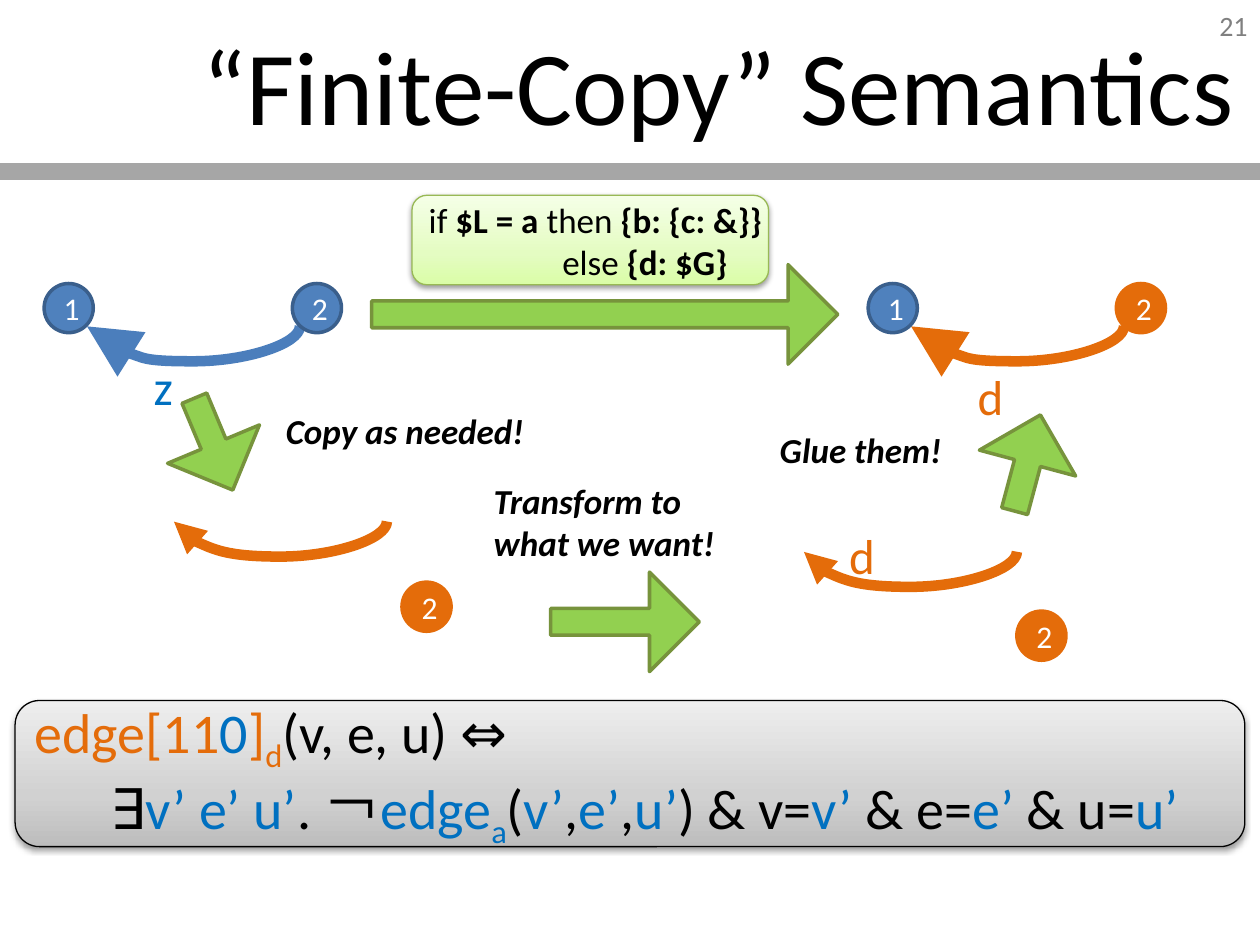
from copy import deepcopy
from lxml.etree import SubElement
from pptx import Presentation
from pptx.dml.color import RGBColor
from pptx.enum.shapes import MSO_CONNECTOR, MSO_SHAPE
from pptx.enum.text import MSO_ANCHOR, PP_ALIGN
from pptx.oxml.ns import qn
from pptx.util import Emu, Inches, Pt

BLACK, WHITE, GRAY = "000000", "FFFFFF", "808080"
ORANGE, BLUE, NODE, RIM = "E46C0A", "0070C0", "4F81BD", "3A5F8C"
ARC, GREEN, EDGE = "4B7EBC", "92D050", "77933C"
DOT = 0.39    # node diameter
SPAN = 1.69   # width of an arc
WIDE, HIGH = 10, 7.5


def color(code):
    return RGBColor.from_string(code)


def style(run, size, code=BLACK, bold=False, ital=False):
    font = run.font
    font.name, font.size = "Calibri", Pt(size)
    font.bold, font.italic = bold, ital
    font.color.rgb = color(code)


def text(slide, box, words, size, code=BLACK, align=PP_ALIGN.LEFT,
         anchor=MSO_ANCHOR.TOP, wrap=True, strong=False):
    frame = slide.shapes.add_textbox(*map(Inches, box)).text_frame
    frame.word_wrap, frame.vertical_anchor = wrap, anchor
    frame.text = words
    for para in frame.paragraphs:
        para.alignment = align
        for run in para.runs:
            style(run, size, code, strong, strong)


def block(slide, kind, box, fill, line, width=2):
    shape = slide.shapes.add_shape(kind, *map(Inches, box))
    shape.shadow.inherit = False
    if fill:
        shape.fill.solid()
        shape.fill.fore_color.rgb = color(fill)
    shape.line.color.rgb = color(line)
    shape.line.width = Pt(width)
    return shape


def link(slide, kind, ends, code, width):
    line = slide.shapes.add_connector(kind, *ends)
    line.line.color.rgb = color(code)
    line.line.width = Pt(width)
    SubElement(line._element.spPr, qn("a:effectLst"))
    return line


def arc(slide, x, y, code, head):
    """Sagging arrow from (x + SPAN, y) back to (x, y)."""
    mid, top = Inches(x + SPAN / 2), Inches(y - SPAN / 2)
    thin = Emu(1588)  # the sag is a multiple of this width
    line = link(slide, MSO_CONNECTOR.CURVE,
                (mid, top, mid + thin, top + Inches(SPAN)), code, 6)
    props = line._element.spPr
    props.find(qn("a:xfrm")).set("rot", "5400000")
    guides = props.find(qn("a:prstGeom")).get_or_add_avLst()
    SubElement(guides, qn("a:gd"), name="adj1", fmla="val 17715800")
    SubElement(props.find(qn("a:ln")), qn("a:tailEnd"),
               type="triangle", w=head, len=head)


def node(slide, x, y, digit, fill, line):
    shape = block(slide, MSO_SHAPE.OVAL, (x, y, DOT, DOT), fill, line)
    frame = shape.text_frame
    frame.text = digit
    frame.vertical_anchor = MSO_ANCHOR.MIDDLE
    frame.paragraphs[0].alignment = PP_ALIGN.CENTER
    style(frame.paragraphs[0].runs[0], 18, WHITE)


def graph(slide, x, y, code, nodes, label=None, head="med"):
    """Arc with its label and nodes, all offset from (x, y)."""
    arc(slide, x + 0.34, y + 0.34, code, head)
    if label:
        word, dx, dy, ink = label
        text(slide, (x + dx, y + dy, 0.41, 0.57), word, 28, ink, wrap=False)
    for dx, dy, digit, fill, line in nodes:
        node(slide, x + dx, y + dy, digit, fill, line)


def step(slide, box, turn=0, note=None, area=None):
    """Green block arrow with an optional note."""
    shape = block(slide, MSO_SHAPE.RIGHT_ARROW, box, GREEN, EDGE)
    shape.adjustments[0], shape.adjustments[1] = 0.269, 0.5
    shape.rotation = turn
    if note:
        text(slide, area, note, 20, strong=True)


def panel(slide, box, shades, line, size, rows, indent, wrap):
    """Shaded rounded box; rows hold (words, colour, bold, low) parts."""
    shape = block(slide, MSO_SHAPE.ROUNDED_RECTANGLE, box, None, line, 0.75)
    shape.fill.gradient()
    shape.fill.gradient_angle = 90
    props = shape._element.spPr
    stops = props.find(".//" + qn("a:gsLst"))
    stops.insert(1, deepcopy(stops[0]))
    for stop, spot, shade in zip(shape.fill.gradient_stops, (0, 0.35, 1), shades):
        stop.position, stop.color.rgb = spot, color(shade)
    # Soft drop shadow
    cast = SubElement(props.find(qn("a:effectLst")), qn("a:outerShdw"),
                      blurRad="40000", dist="20000", dir="5400000", rotWithShape="0")
    tint = SubElement(cast, qn("a:srgbClr"), val=BLACK)
    SubElement(tint, qn("a:alpha"), val="38000")
    # Text rows, the second one indented
    frame = shape.text_frame
    frame.word_wrap, frame.vertical_anchor = wrap, MSO_ANCHOR.MIDDLE
    for i, row in enumerate(rows):
        para = frame.add_paragraph() if i else frame.paragraphs[0]
        para.alignment = PP_ALIGN.LEFT
        if i:
            props = para._p.get_or_add_pPr()
            props.set("marL", str(Inches(indent)))
            props.set("indent", "0")
        for words, code, bold, low in row:
            run = para.add_run()
            run.text = words
            style(run, size, code, bold)
            if low:
                run._r.get_or_add_rPr().set("baseline", "-25000")


def header(slide, wide, high):
    text(slide, (wide - 2.33, 0, 2.33, 0.4), "21", 16, GRAY,
         PP_ALIGN.RIGHT, MSO_ANCHOR.MIDDLE)
    rule = Inches(high)
    link(slide, MSO_CONNECTOR.STRAIGHT, (0, rule, Inches(wide), rule), "A6A6A6", 10)
    text(slide, (0.35, 0.04, wide - 0.46, 1.25), "“Finite-Copy” Semantics", 60,
         align=PP_ALIGN.RIGHT, anchor=MSO_ANCHOR.MIDDLE)


def plain(words, code=BLACK):
    return words, code, False, False


def strong(words):
    return words, BLACK, True, False


def low(words, code):
    return words, code, False, True


def main():
    deck = Presentation()
    deck.slide_width, deck.slide_height = Inches(WIDE), Inches(HIGH)
    slide = deck.slides.add_slide(deck.slide_layouts[6])
    header(slide, WIDE, 1.36)

    # Rule and the overall step
    step(slide, (2.95, 2.1, 3.7, 0.79))
    panel(slide, (3.27, 1.55, 2.83, 0.71), ("DAFDA7", "E4FCC2", "F5FFE7"), "98B955", 20,
          [[plain("if "), strong("$L = a"), plain(" then "), strong("{b: {c: &}}")],
           [plain("else "), strong("{d: $G}")]], 1.06, False)

    # Input and output graphs
    one, two = (0, 0, "1", NODE, RIM), (1.97, 0, "2", NODE, RIM)
    new = (1.97, 0, "2", ORANGE, ORANGE)
    graph(slide, 6.89, 2.25, ORANGE, [one, new], ("d", 0.77, 0.61, ORANGE), "lg")
    graph(slide, 0.35, 2.25, ARC, [one, two], ("z", 0.77, 0.53, BLUE), "lg")

    # Copy, transform, glue
    step(slide, (7.76, 3.28, 0.79, 0.79), 285, "Glue them!", (6.09, 3.35, 1.57, 0.44))
    step(slide, (1.3, 3.13, 0.79, 0.79), 67.3, "Copy as needed!", (2.17, 3.2, 2.13, 0.44))
    step(slide, (4.37, 4.54, 1.18, 0.79), 0, "Transform to\nwhat we want!",
         (3.82, 3.76, 2.05, 0.77))
    graph(slide, 1.04, 3.8, ORANGE, [(2.15, 0.82, "2", ORANGE, ORANGE)])
    graph(slide, 6.04, 4.04, ORANGE, [(2.03, 0.81, "2", ORANGE, ORANGE)],
          ("d", 0.6, 0.08, ORANGE))

    # Formula
    first = [plain("edge[11", ORANGE), plain("0", BLUE), plain("]", ORANGE),
             low("d", ORANGE), plain("(v, e, u) ⇔")]
    second = [plain("∃"), plain("v’ e’ u’", BLUE), plain(". ￢"), plain("edge", BLUE),
              low("a", BLUE), plain("("), plain("v’", BLUE), plain(","),
              plain("e’", BLUE), plain(","), plain("u’", BLUE), plain(") & v="),
              plain("v’ ", BLUE), plain("& e="), plain("e’ ", BLUE),
              plain("& u="), plain("u’", BLUE)]
    panel(slide, (0.12, 5.56, WIDE - 0.24, 1.16), ("BDBDBD", "D1D1D1", "EEEEEE"), BLACK, 32,
          [first, second], 0.6, False)
    deck.save("out.pptx")


if __name__ == "__main__":
    main()
